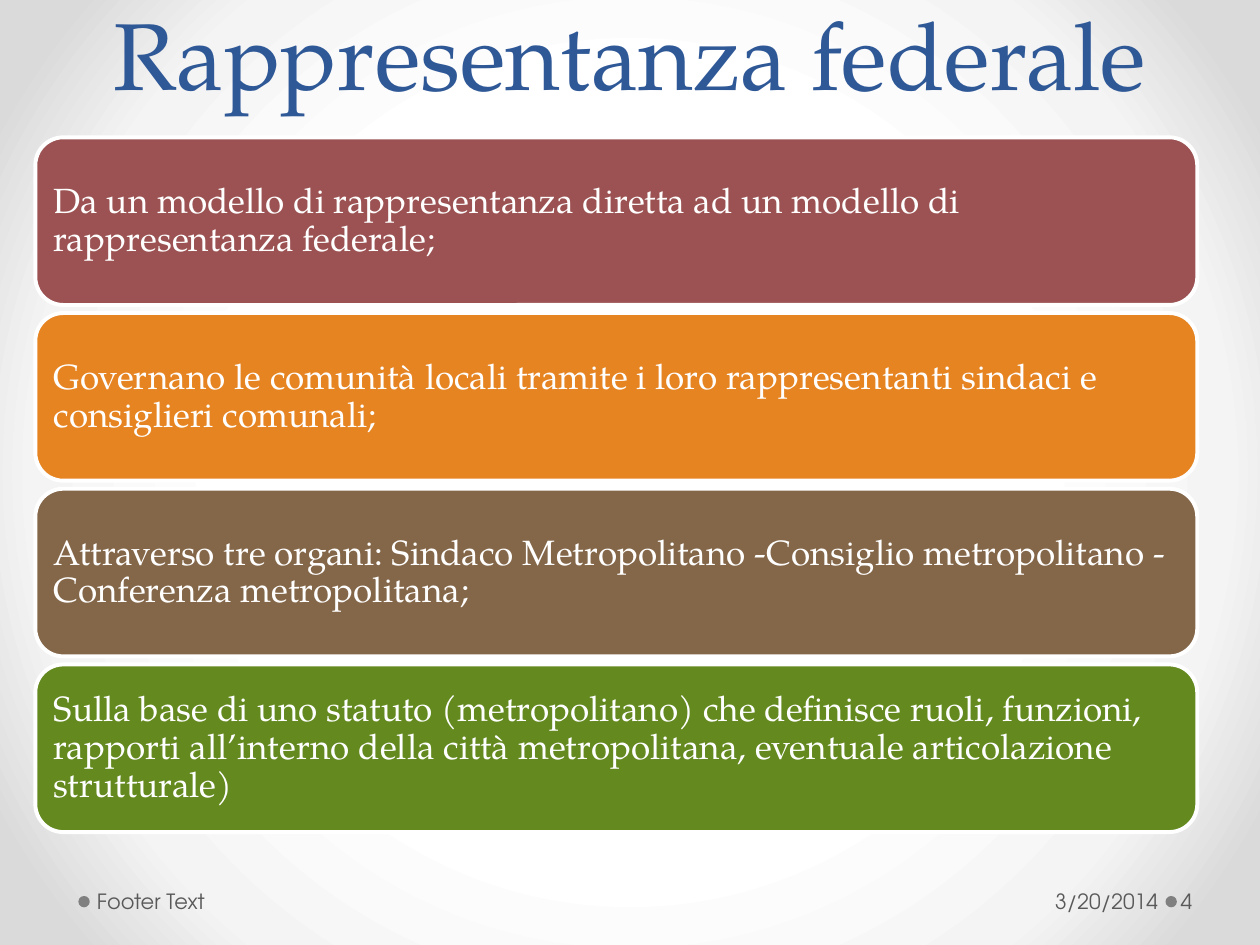
from dataclasses import dataclass

from pptx import Presentation
from pptx.dml.color import RGBColor
from pptx.enum.shapes import MSO_SHAPE
from pptx.enum.text import MSO_ANCHOR, PP_ALIGN
from pptx.oxml import parse_xml
from pptx.oxml.ns import nsdecls
from pptx.shapes.base import BaseShape
from pptx.slide import Slide
from pptx.util import Pt

WHITE = RGBColor(0xFF, 0xFF, 0xFF)
BLUE = RGBColor(0x2F, 0x58, 0x97)
RED = RGBColor(0x9C, 0x52, 0x52)
ORANGE = RGBColor(0xE6, 0x84, 0x22)
BROWN = RGBColor(0x84, 0x66, 0x48)
GREEN = RGBColor(0x63, 0x89, 0x1F)
DOT_GRAY = RGBColor(0x80, 0x80, 0x80)
FOOTER_GRAY = RGBColor(0x59, 0x59, 0x59)
SERIF = "TeX Gyre Pagella"
SANS = "TeX Gyre Adventor"

BACKGROUND_STOPS = ((50, WHITE), (76, RGBColor(0xF4, 0xF4, 0xF4)), (92, RGBColor(0xDA, 0xDA, 0xDA)))

CARD_LEFT, CARD_TOP = 20.2, 78.5
CARD_WIDTH, CARD_HEIGHT, CARD_PITCH = 664, 95.8, 100.4
FOOTER_TOP, FOOTER_HEIGHT = 500.4, 28.8
DOT_TOP, DOT_SIZE = 512, 6.5


@dataclass(frozen=True)
class TextStyle:
    font: str
    size: float
    color: RGBColor
    alignment: PP_ALIGN = PP_ALIGN.LEFT
    anchor: MSO_ANCHOR = MSO_ANCHOR.MIDDLE
    line_spacing: float | Pt = 1.0


@dataclass(frozen=True)
class Card:
    text: str
    color: RGBColor


@dataclass(frozen=True)
class FooterField:
    text: str
    left: float
    width: float
    left_inset: float
    right_inset: float
    alignment: PP_ALIGN = PP_ALIGN.LEFT


TITLE_STYLE = TextStyle(SERIF, 54, BLUE, PP_ALIGN.CENTER, MSO_ANCHOR.BOTTOM, Pt(58))
CARD_STYLE = TextStyle(SERIF, 20, WHITE, line_spacing=0.9)

CARDS = (
    Card("Da un modello di rappresentanza diretta ad un modello di rappresentanza federale;", RED),
    Card("Governano le comunità locali tramite i loro rappresentanti sindaci e consiglieri comunali;", ORANGE),
    Card("Attraverso tre organi: Sindaco Metropolitano -Consiglio metropolitano - "
         "Conferenza metropolitana;", BROWN),
    Card("Sulla base di uno statuto (metropolitano) che definisce ruoli, funzioni, rapporti "
         "all’interno della città metropolitana, eventuale articolazione strutturale)", GREEN),
)
FOOTER_FIELDS = (
    FooterField("3/20/2014", 501.1, 164.2, 7.2, 3.6, PP_ALIGN.RIGHT),
    FooterField("Footer Text", 51.8, 224, 3.6, 7.2),
    FooterField("4", 672.5, 44, 2.2, 3.6),
)
DOT_LEFTS = (666, 44.8)


def set_radial_background(slide: Slide) -> None:
    """Give the slide a circular gradient, which python-pptx offers only as XML."""
    stops = "".join(
        f'<a:gs pos="{position * 1000}"><a:srgbClr val="{color}"/></a:gs>'
        for position, color in BACKGROUND_STOPS
    )
    background = parse_xml(
        f'<p:bg {nsdecls("p", "a")}><p:bgPr><a:gradFill rotWithShape="1"><a:gsLst>{stops}</a:gsLst>'
        '<a:path path="circle"><a:fillToRect l="50000" t="50000" r="50000" b="50000"/></a:path>'
        "</a:gradFill><a:effectLst/></p:bgPr></p:bg>"
    )
    slide.element.cSld.insert(0, background)


def write_text(shape: BaseShape, text: str, style: TextStyle,
               insets: tuple[float, float, float, float]) -> None:
    """Fill a shape with one styled paragraph; insets are left, top, right, bottom."""
    text_frame = shape.text_frame
    text_frame.text = text
    text_frame.word_wrap = True
    text_frame.vertical_anchor = style.anchor
    (text_frame.margin_left, text_frame.margin_top,
     text_frame.margin_right, text_frame.margin_bottom) = map(Pt, insets)
    paragraph = text_frame.paragraphs[0]
    paragraph.alignment = style.alignment
    paragraph.line_spacing = style.line_spacing
    font = paragraph.runs[0].font
    font.name = style.font
    font.size = Pt(style.size)
    font.color.rgb = style.color


def add_filled_shape(slide: Slide, kind: MSO_SHAPE, left: float, top: float,
                     width: float, height: float, color: RGBColor) -> BaseShape:
    shape = slide.shapes.add_shape(kind, Pt(left), Pt(top), Pt(width), Pt(height))
    shape.shadow.inherit = False
    shape.fill.solid()
    shape.fill.fore_color.rgb = color
    shape.line.fill.background()
    return shape


def add_card(slide: Slide, card: Card, top: float) -> None:
    shape = add_filled_shape(slide, MSO_SHAPE.ROUNDED_RECTANGLE, CARD_LEFT, top,
                             CARD_WIDTH, CARD_HEIGHT, card.color)
    shape.line.color.rgb = WHITE
    shape.line.width = Pt(2.25)
    write_text(shape, card.text, CARD_STYLE, (5.8, 5.8, 5.8, 5.8))


def add_footer_field(slide: Slide, field: FooterField) -> None:
    box = slide.shapes.add_textbox(Pt(field.left), Pt(FOOTER_TOP), Pt(field.width), Pt(FOOTER_HEIGHT))
    style = TextStyle(SANS, 12, FOOTER_GRAY, field.alignment)
    write_text(box, field.text, style, (field.left_inset, 3.6, field.right_inset, 3.6))


def main() -> None:
    presentation = Presentation()
    presentation.slide_width, presentation.slide_height = Pt(720), Pt(540)
    slide = presentation.slides.add_slide(presentation.slide_layouts[6])
    set_radial_background(slide)

    for left in DOT_LEFTS:
        add_filled_shape(slide, MSO_SHAPE.OVAL, left, DOT_TOP, DOT_SIZE, DOT_SIZE, DOT_GRAY)

    title = slide.shapes.add_textbox(Pt(36), Pt(0), Pt(648), Pt(66))
    write_text(title, "Rappresentanza federale", TITLE_STYLE, (7.2, 3.6, 7.2, 3.6))

    for index, card in enumerate(CARDS):
        add_card(slide, card, CARD_TOP + index * CARD_PITCH)
    for field in FOOTER_FIELDS:
        add_footer_field(slide, field)

    presentation.save("out.pptx")


if __name__ == "__main__":
    main()
